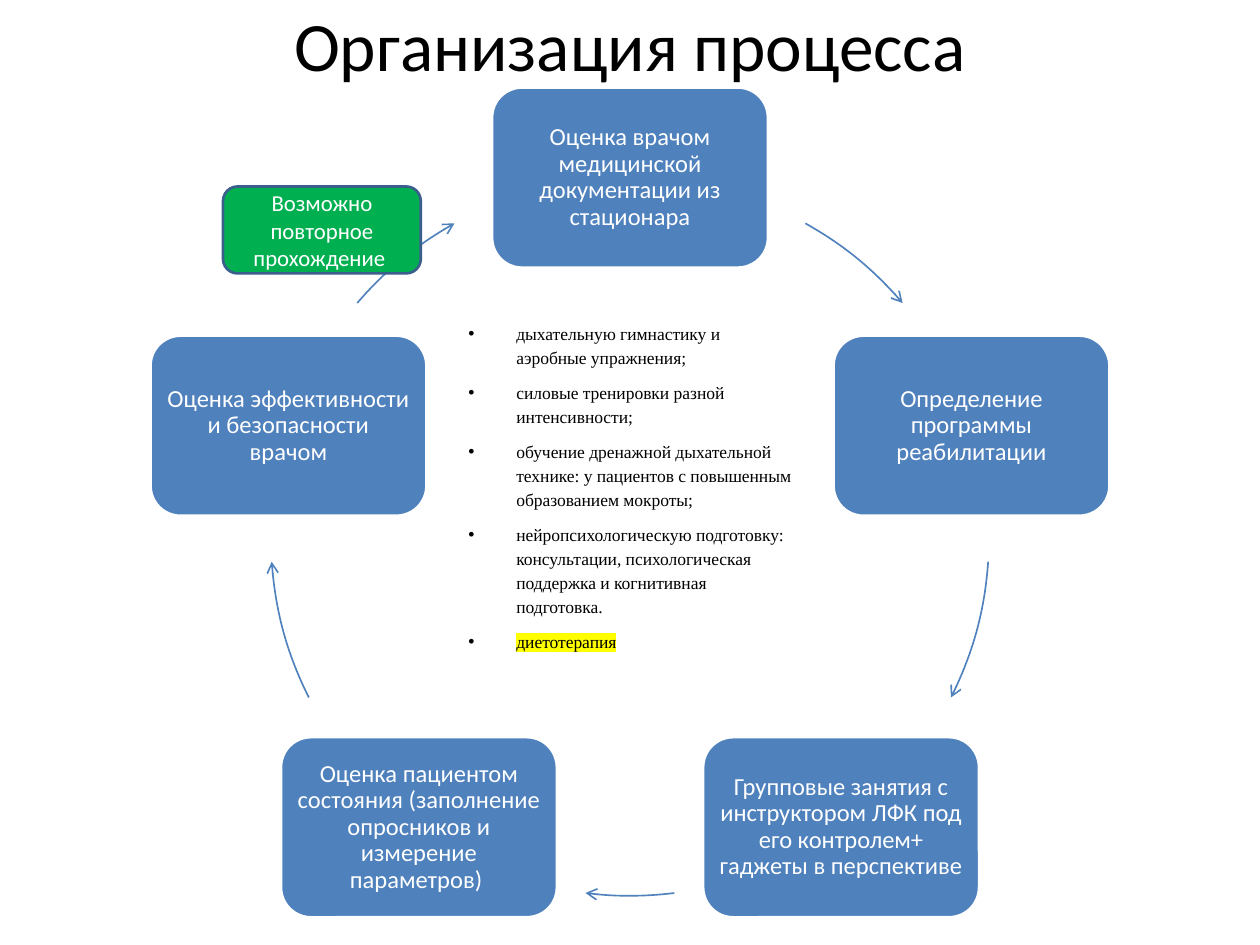
"""Build the slide showing the rehabilitation process as a cycle of five steps."""
from math import cos, radians, sin

from lxml.etree import SubElement
from pptx import Presentation
from pptx.dml.color import RGBColor
from pptx.enum.shapes import MSO_SHAPE
from pptx.enum.text import MSO_ANCHOR, PP_ALIGN
from pptx.oxml.ns import qn
from pptx.util import Inches, Pt

COLORS = {
    "step": "4F81BD",
    "repeat": "00B050",
    "repeat_edge": "3A5F8C",
    "light": "FFFFFF",
    "dark": "000000",
    "mark": "FFFF00",
}
CENTER_X, CENTER_Y, RADIUS = 5, 4.26, 2.85
STEP_WIDTH, STEP_HEIGHT = 2.19, 1.43


def write(frame, lines, font, color, frame_format, line_format):
    for name, value in frame_format.items():
        setattr(frame, name, value)
    for index, line in enumerate(lines):
        paragraph = frame.paragraphs[0] if index == 0 else frame.add_paragraph()
        for name, value in line_format.items():
            setattr(paragraph, name, value)
        run = paragraph.add_run()
        run.text = line
        for name, value in font.items():
            setattr(run.font, name, value)
        run.font.color.rgb = RGBColor.from_string(COLORS[color])


def add_box(left, top, width, height, fill, edge):
    box = slide.shapes.add_shape(
        MSO_SHAPE.ROUNDED_RECTANGLE,
        Inches(left), Inches(top), Inches(width), Inches(height),
    )
    box.shadow.inherit = False
    box.fill.solid()
    box.fill.fore_color.rgb = RGBColor.from_string(COLORS[fill])
    box.line.color.rgb = RGBColor.from_string(COLORS[edge])
    box.line.width = Pt(1.5)
    return box


presentation = Presentation()
presentation.slide_width = Inches(10)
presentation.slide_height = Inches(7.5)
slide = presentation.slides.add_slide(presentation.slide_layouts[6])

middle = {"word_wrap": True, "vertical_anchor": MSO_ANCHOR.MIDDLE}
centered = {"alignment": PP_ALIGN.CENTER}
margins = ("margin_left", "margin_top", "margin_right", "margin_bottom")
step_frame = {**middle, **dict.fromkeys(margins, Inches(0.06))}

title = slide.shapes.add_textbox(Inches(0.5), Inches(0), Inches(9), Inches(0.69))
write(title.text_frame, ["Организация процесса"],
      {"name": "Calibri", "size": Pt(39.6)}, "dark", middle, centered)

steps = [
    ("Оценка врачом медицинской документации из стационара", 29.25, 49.4),
    ("Определение программы реабилитации", 94, 116.6),
    ("Групповые занятия с инструктором ЛФК под его контролем+ гаджеты в перспективе",
     172.9, 187.1),
    ("Оценка пациентом состояния (заполнение опросников и измерение параметров) ",
     243.4, 266),
    ("Оценка эффективности и безопасности врачом", 310.6, 330.75),
]
for index, (step, arc_start, arc_end) in enumerate(steps):
    angle = radians(index * 360 / len(steps))
    step_box = add_box(
        CENTER_X + RADIUS * sin(angle) - STEP_WIDTH / 2,
        CENTER_Y - RADIUS * cos(angle) - STEP_HEIGHT / 2,
        STEP_WIDTH, STEP_HEIGHT, "step", "light",
    )
    write(step_box.text_frame, [step], {"name": "Calibri", "size": Pt(14)}, "light",
          step_frame, {**centered, "line_spacing": 0.9})

    arc = slide.shapes.add_shape(
        MSO_SHAPE.ARC, Inches(CENTER_X - RADIUS), Inches(CENTER_Y - RADIUS),
        Inches(2 * RADIUS), Inches(2 * RADIUS),
    )
    for side, bearing in enumerate((arc_start, arc_end)):
        arc.adjustments[side] = (bearing - 90) % 360 * 0.6
    arc.shadow.inherit = False
    arc.fill.background()
    arc.line.color.rgb = RGBColor.from_string(COLORS["step"])
    arc.line.width = Pt(0.94)
    SubElement(arc.line._get_or_add_ln(), qn("a:tailEnd"), type="arrow")

program = [
    "дыхательную гимнастику и аэробные упражнения;",
    "силовые тренировки разной интенсивности;",
    "обучение дренажной дыхательной технике: у пациентов с повышенным образованием мокроты;",
    "нейропсихологическую подготовку: консультации, психологическая поддержка "
    "и когнитивная подготовка.",
    "диетотерапия",
]
program_list = slide.shapes.add_textbox(
    Inches(3.62), Inches(2.49), Inches(2.76), Inches(2.92))
write(program_list.text_frame, program, {"name": "Times New Roman", "size": Pt(10)},
      "dark", {"word_wrap": True}, {"line_spacing": 1.15, "space_after": Pt(6)})
for item in program_list.text_frame.paragraphs:
    properties = item._p.get_or_add_pPr()
    properties.set("marL", str(Inches(0.38)))
    properties.set("indent", str(Inches(-0.38)))
    SubElement(properties, qn("a:buFont"), typeface="Arial")
    SubElement(properties, qn("a:buChar"), char="•")

diet = program_list.text_frame.paragraphs[-1].runs[0]._r.get_or_add_rPr()
highlight = SubElement(diet, qn("a:highlight"))
SubElement(highlight, qn("a:srgbClr"), val=COLORS["mark"])
diet.find(qn("a:solidFill")).addnext(highlight)

repeat_box = add_box(1.77, 1.48, 1.57, 0.69, "repeat", "repeat_edge")
write(repeat_box.text_frame, ["Возможно повторное прохождение "],
      {"name": "Calibri", "size": Pt(13)}, "light", middle, centered)

presentation.save("out.pptx")
